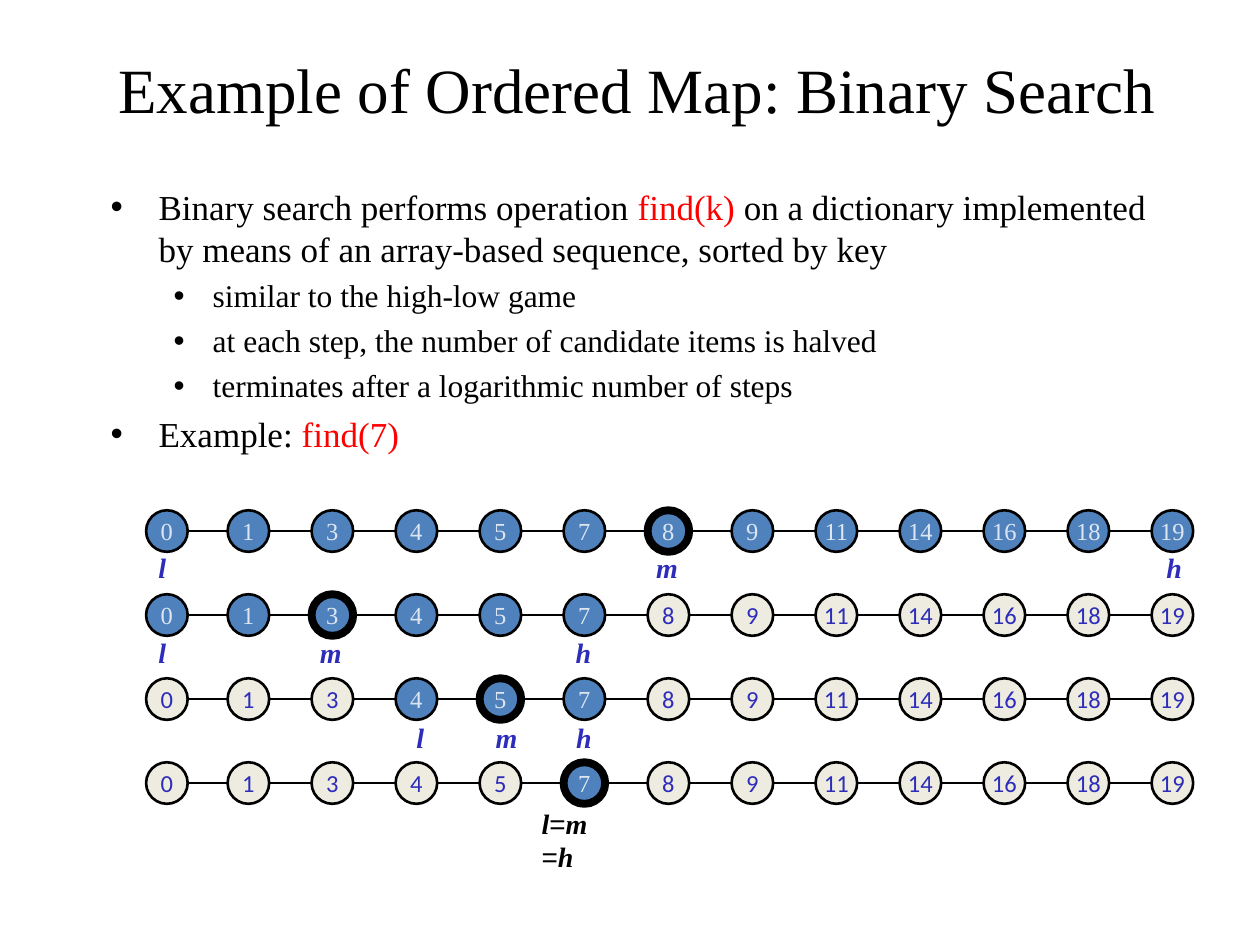
from dataclasses import dataclass

from lxml import etree
from pptx import Presentation
from pptx.dml.color import RGBColor
from pptx.enum.shapes import MSO_CONNECTOR, MSO_SHAPE
from pptx.enum.text import MSO_ANCHOR, PP_ALIGN
from pptx.oxml.ns import qn
from pptx.util import Inches, Pt

LINE = MSO_CONNECTOR.STRAIGHT
OVAL = MSO_SHAPE.OVAL
MIDDLE = MSO_ANCHOR.MIDDLE
LEFT, CENTER = PP_ALIGN.LEFT, PP_ALIGN.CENTER


@dataclass(frozen=True)
class Theme:
    serif: str = "Times New Roman"
    sans: str = "Calibri"
    sign: str = "Arial"
    black: str = "000000"
    red: str = "FF0000"
    blue: str = "4F81BD"
    pale: str = "DCE6F2"
    cream: str = "EEECE1"
    navy: str = "2D2DB9"
    title: int = 36
    body: tuple = (20, 18)
    node: int = 14
    mark: int = 16
    thin: float = 1.5
    thick: float = 4.5


T = Theme()

# Bullets: level, then runs of text and colour
POINTS = [
    (0, [("Binary search performs operation ", T.black), ("find(k) ", T.red),
         ("on a dictionary implemented by means of an array-based sequence, "
          "sorted by key", T.black)]),
    (1, [("similar to the high-low game", T.black)]),
    (1, [("at each step, the number of candidate items is halved", T.black)]),
    (1, [("terminates after a logarithmic number of steps", T.black)]),
    (0, [("Example: ", T.black), ("find(7)", T.red)]),
]
INDENTS = [(0.38, -0.38), (0.81, -0.31)]

KEYS = [0, 1, 3, 4, 5, 7, 8, 9, 11, 14, 16, 18, 19]
SIZE = 0.33
PITCH = 2 / 3

# Search steps: low, middle and high index, label alignment,
# label drop below the row, labels as (text, left, width)
STEPS = [
    (0, 6, 12, LEFT, 0.27,
     [("m", 5.11, 0.45), ("l", 1.16, 0.34), ("h", 9.16, 0.4)]),
    (0, 2, 5, LEFT, 0.28,
     [("m", 2.44, 0.45), ("l", 1.16, 0.34), ("h", 4.47, 0.4)]),
    (3, 4, 5, CENTER, 0.29,
     [("m", 3.83, 0.38), ("l", 3.2, 0.27), ("h", 4.47, 0.33)]),
    (5, 5, 5, LEFT, 0.3, []),
]


def style(obj, **values):
    for name, value in values.items():
        setattr(obj, name, value)


def write(para, text, size, color, face=T.serif, **more):
    run = para.add_run()
    run.text = text
    style(run.font, size=Pt(size), name=face, **more)
    run.font.color.rgb = RGBColor.from_string(color)


def stroke(shape, width):
    shape.line.color.rgb = RGBColor.from_string(T.black)
    shape.line.width = Pt(width)


def add_title(slide, box):
    title = slide.shapes.title
    style(title, **dict(zip(("left", "top", "width", "height"),
                            map(Inches, box))))
    title.text_frame.vertical_anchor = MIDDLE
    para = title.text_frame.paragraphs[0]
    para.alignment = CENTER
    write(para, "Example of Ordered Map: Binary Search", T.title, T.black)


def add_points(slide, box):
    frame = slide.shapes.add_textbox(*map(Inches, box)).text_frame
    frame.word_wrap = True
    for i, (level, runs) in enumerate(POINTS):
        para = frame.add_paragraph() if i else frame.paragraphs[0]
        size = T.body[level]
        style(para, level=level, space_before=Pt(size * 0.23))
        # Hanging bullet
        props = para._p.get_or_add_pPr()
        for name, value in zip(("marL", "indent"), INDENTS[level]):
            props.set(name, str(Inches(value)))
        etree.SubElement(props, qn("a:buFont")).set("typeface", T.sign)
        etree.SubElement(props, qn("a:buChar")).set("char", "•")
        for text, color in runs:
            write(para, text, size, color)


def add_node(group, left, top, key, live, mid):
    node = group.shapes.add_shape(
        OVAL, *map(Inches, (left, top, SIZE, SIZE)))
    node.shadow.inherit = False
    node.fill.solid()
    node.fill.fore_color.rgb = RGBColor.from_string(
        T.blue if live else T.cream)
    stroke(node, T.thick if mid else T.thin)
    style(node.text_frame, word_wrap=False, vertical_anchor=MIDDLE)
    para = node.text_frame.paragraphs[0]
    para.alignment = CENTER
    color, face = (T.pale, T.serif) if live else (T.navy, T.sans)
    write(para, str(key), T.node, color, face)


def add_mark(group, box, align=LEFT):
    frame = group.shapes.add_textbox(*map(Inches, box)).text_frame
    frame.word_wrap = False
    frame.paragraphs[0].alignment = align
    return frame


def add_row(slide, box, step):
    left, top, width = box
    low, mid, high, align, drop, marks = step
    group = slide.shapes.add_group_shape()

    # Line behind the nodes
    y = top + SIZE / 2
    line = group.shapes.add_connector(
        LINE, *map(Inches, (left + SIZE, y, left + width - SIZE, y)))
    stroke(line, T.thin)
    etree.SubElement(line._element.spPr, qn("a:effectLst"))

    # Nodes, spaced evenly back from the right end
    last = len(KEYS) - 1
    for i, key in enumerate(KEYS):
        x = left + width - SIZE - (last - i) * PITCH if i else left
        add_node(group, x, top, key, low <= i <= high, i == mid)

    # Labels under the row
    for text, x, wide in marks:
        frame = add_mark(group, (x, top + drop, wide, 0.36), align)
        write(frame.paragraphs[0], text, T.mark, T.navy,
              bold=True, italic=True)
    return group


def add_match(group, box):
    frame = add_mark(group, box)
    style(frame, word_wrap=True, margin_right=Inches(0.2))
    for text in ("l", "=", "m ", "=", "h"):
        name = text != "="
        write(frame.paragraphs[0], text, T.mark, T.black,
              T.serif if name else T.sign, bold=name, italic=name)


def main():
    deck = Presentation()
    style(deck, slide_width=Inches(10), slide_height=Inches(7.5))
    slide = deck.slides.add_slide(deck.slide_layouts[5])
    add_title(slide, (0.39, 0.33, 9.33, 0.75))
    add_points(slide, (0.78, 1.42, 8.75, 2.42))
    for i, step in enumerate(STEPS):
        group = add_row(slide, (1.16, 4.05 + i * PITCH, 8.31), step)
    add_match(group, (4.2, 6.35, 0.86, 0.37))
    deck.save("out.pptx")


if __name__ == "__main__":
    main()
